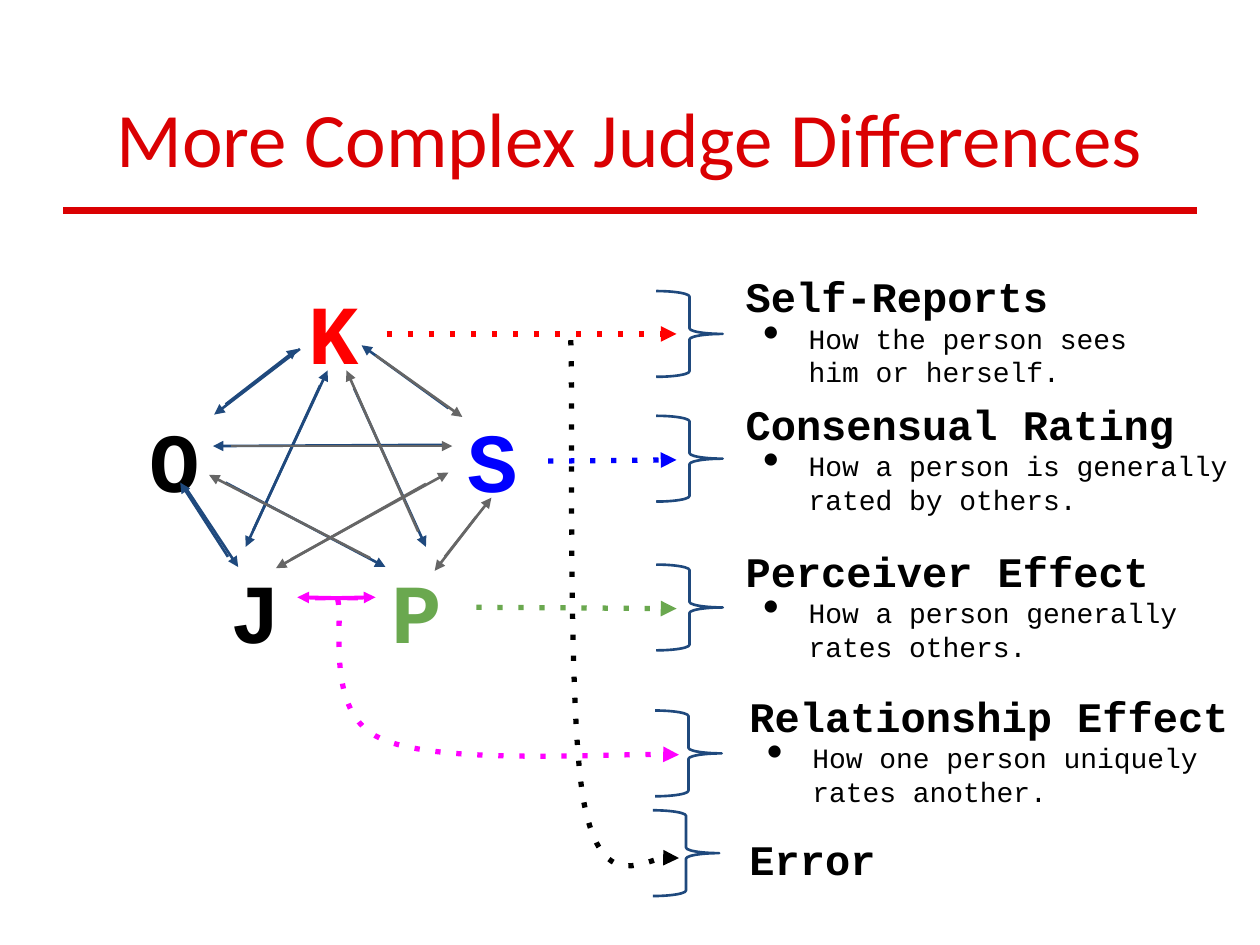
from dataclasses import dataclass

from lxml import etree
from pptx import Presentation
from pptx import util as u
from pptx.dml import color
from pptx.enum import shapes, text
from pptx.oxml import ns

Pt = u.Pt


@dataclass(frozen=True)
class Theme:
    title_font: str = "Calibri"
    body_font: str = "Courier New"
    title: str = "DA0002"
    ink: str = "000000"
    navy: str = "1F497D"
    grey: str = "666666"
    red: str = "FF0000"
    blue: str = "0000FF"
    green: str = "6AA84F"
    magenta: str = "FF00FF"
    title_size: float = 44
    letter_size: float = 48
    heading_size: float = 24
    detail_size: float = 16
    thin: float = 1.5
    medium: float = 2.25
    dotted: float = 3
    rule: float = 4


THEME = Theme()


def rgb(value):
    return color.RGBColor.from_string(value)


def add_xml(parent, tag, **attributes):
    return etree.SubElement(parent, ns.qn(tag), attributes)


def style_line(shape, ink, width, dotted=False, arrow=False):
    shape.line.color.rgb = rgb(ink)
    shape.line.width = Pt(width)
    line_xml = shape.line._get_or_add_ln()
    if dotted:
        add_xml(line_xml, "a:prstDash", val="dot")
    if arrow:
        add_xml(line_xml, "a:tailEnd", type="triangle")


def add_line(slide, box, points, ink, width, dotted=False, arrow=True):
    left, top = box[:2]
    x1, y1, x2, y2 = points
    connector = slide.shapes.add_connector(
        shapes.MSO_CONNECTOR.STRAIGHT,
        Pt(left + x1), Pt(top + y1), Pt(left + x2), Pt(top + y2))
    style_line(connector, ink, width, dotted, arrow)
    add_xml(connector._element.spPr, "a:effectLst")


def add_curve(slide, box, points, ink):
    left, top = box[:2]
    places = [(Pt(left + x), Pt(top + y)) for x, y in points]
    builder = slide.shapes.build_freeform(*places[0])
    builder.add_line_segments(places[1:], close=False)
    curve = builder.convert_to_shape()
    outline = next(curve._element.iter(ns.qn("a:path")))
    segments = outline.findall(ns.qn("a:lnTo"))
    for index in range(0, len(segments), 3):
        bezier = add_xml(outline, "a:cubicBezTo")
        for segment in segments[index:index + 3]:
            bezier.append(segment[0])
            outline.remove(segment)
    curve.fill.background()
    curve.shadow.inherit = False
    style_line(curve, ink, THEME.dotted, dotted=True, arrow=True)


def add_text(slide, left, top, width, height):
    shape = slide.shapes.add_textbox(Pt(left), Pt(top), Pt(width), Pt(height))
    frame = shape.text_frame
    frame.word_wrap = True
    frame.margin_left = frame.margin_right = Pt(7.2)
    frame.margin_top = frame.margin_bottom = Pt(7.2)
    return frame


def write(paragraph, words, font_name, size, ink, bold=False):
    paragraph.text = words
    font = paragraph.font
    font.name, font.size, font.bold = font_name, Pt(size), bold
    font.color.rgb = rgb(ink)


def add_bullet(paragraph):
    properties = paragraph._p.get_or_add_pPr()
    properties.set("marL", str(Pt(36)))
    properties.set("indent", str(-Pt(26)))
    bullet_color = etree.Element(ns.qn("a:buClr"))
    add_xml(bullet_color, "a:srgbClr", val=THEME.ink)
    size = etree.Element(ns.qn("a:buSzPct"), val="167000")
    character = etree.Element(ns.qn("a:buChar"), char="•")
    for index, element in enumerate((bullet_color, size, character)):
        properties.insert(index, element)


def build_heading(slide, box):
    left, top, width, height = box
    title = slide.shapes.title
    title.left, title.top = Pt(left), Pt(top)
    title.width, title.height = Pt(width), Pt(height)
    frame = title.text_frame
    frame.auto_size = text.MSO_AUTO_SIZE.NONE
    frame.vertical_anchor = text.MSO_ANCHOR.BOTTOM
    frame.margin_left = frame.margin_right = Pt(7.2)
    frame.margin_top = frame.margin_bottom = Pt(7.2)
    paragraph = frame.paragraphs[0]
    write(paragraph, "More Complex Judge Differences",
          THEME.title_font, THEME.title_size, THEME.title)
    paragraph.alignment = text.PP_ALIGN.CENTER
    rule_y = height + 8.6
    add_line(slide, box, (0, rule_y, width, rule_y),
             THEME.title, THEME.rule, arrow=False)


def build_network(slide, box):
    left, top = box[:2]
    letters = [
        ("K", 91, 0, THEME.red), ("S", 182, 73, THEME.blue),
        ("J", 46.5, 159.5, THEME.ink), ("P", 138.7, 159.5, THEME.green),
        ("O", 0.5, 73, THEME.ink),
    ]
    for letter, x, y, ink in letters:
        frame = add_text(slide, left + x, top + y, 45, 59)
        write(frame.paragraphs[0], letter, THEME.body_font,
              THEME.letter_size, ink, True)
    arrows = [
        (THEME.navy, THEME.thin, [
            (93.4, 46.4, 44.4, 83.9), (175.4, 101.2, 43.7, 101.9),
            (104.9, 67.3, 62.4, 159.5), (124.3, 68.8, 165.4, 159.5),
            (52.3, 165.2, 25, 122.8), (28.6, 126.4, 58.1, 171),
            (50.9, 122.8, 142.3, 171), (50.9, 78.1, 91.9, 46.4),
            (178.3, 80.3, 128.6, 44.3), (66.7, 150.1, 109.2, 58.7)]),
        (THEME.grey, THEME.thin, [
            (165.4, 123.5, 79.7, 171.7), (53.8, 101.9, 180.5, 101.9),
            (136.6, 50, 186.2, 85.3), (88.3, 166.7, 178.3, 117),
            (194.2, 142.2, 170.4, 173.2), (176.2, 165.2, 202.8, 131.4),
            (133.7, 166, 41.5, 118.4), (161, 150.8, 120, 58.7)]),
        (THEME.magenta, THEME.medium, [
            (102, 189, 136.6, 188.3), (126.5, 189, 91.9, 188.3)]),
    ]
    for ink, width, lines in arrows:
        for points in lines:
            add_line(slide, box, points, ink, width)


def build_trails(slide, box):
    trails = [
        (THEME.red, (143, 37.8, 308.6, 37.8)),
        (THEME.blue, (235.2, 110.5, 308.6, 109.8)),
        (THEME.green, (194.2, 194, 308.6, 194.8)),
    ]
    for ink, points in trails:
        add_line(slide, box, points, ink, THEME.dotted, dotted=True)
    add_curve(slide, box, [
        (115, 189.7), (118.6, 202.7), (107, 254.5), (139.4, 268.9),
        (171.8, 284), (282, 276.8), (310, 278.3)], THEME.magenta)
    add_curve(slide, box, [
        (248.2, 41.4), (249.6, 86), (246, 258.1), (256, 307),
        (266.2, 356.8), (301.4, 332.3), (310, 337.3)], THEME.ink)


def build_legend(slide, box):
    left, top = box[:2]
    entries = [
        ("Self-Reports", "How the person sees him or herself.",
         46, -0.4, 265, 2, 18.3),
        ("Consensual Rating", "How a person is generally rated by others.",
         46, 72.3, 296, 2, 89.6),
        ("Perceiver Effect", "How a person generally rates others.",
         46, 156.6, 294, 2, 174.6),
        ("Relationship Effect", "How one person uniquely rates another.",
         48.2, 239.4, 299, 1.4, 258),
        ("Error", None, 48.2, 321.4, 299, 0, 315),
    ]
    for heading, detail, x, y, width, brace_x, brace_y in entries:
        brace = slide.shapes.add_shape(
            shapes.MSO_SHAPE.RIGHT_BRACE,
            Pt(left + brace_x), Pt(top + brace_y), Pt(38), Pt(49))
        brace.fill.background()
        brace.shadow.inherit = False
        style_line(brace, THEME.navy, THEME.thin)
        frame = add_text(slide, left + x, top + y, width, 61)
        write(frame.paragraphs[0], heading, THEME.body_font,
              THEME.heading_size, THEME.ink, True)
        if detail:
            paragraph = frame.add_paragraph()
            write(paragraph, detail, THEME.body_font,
                  THEME.detail_size, THEME.ink)
            add_bullet(paragraph)


def main():
    presentation = Presentation()
    presentation.slide_width, presentation.slide_height = Pt(720), Pt(540)
    slide = presentation.slides.add_slide(presentation.slide_layouts[5])
    diagram = (78, 153, 310, 340)
    build_heading(slide, (36, 21.6, 648, 90))
    build_network(slide, diagram)
    build_legend(slide, (373, 148, 347, 382))
    build_trails(slide, diagram)
    presentation.save("out.pptx")


if __name__ == "__main__":
    main()
